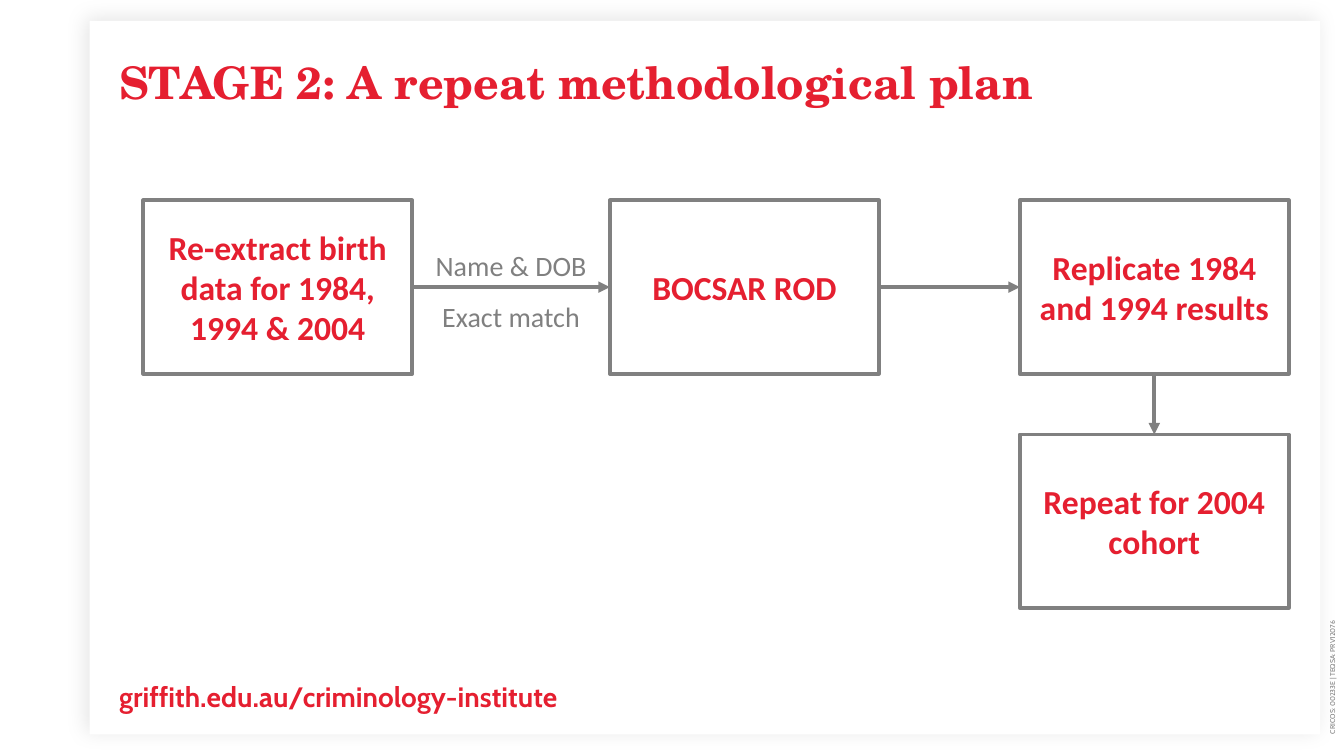
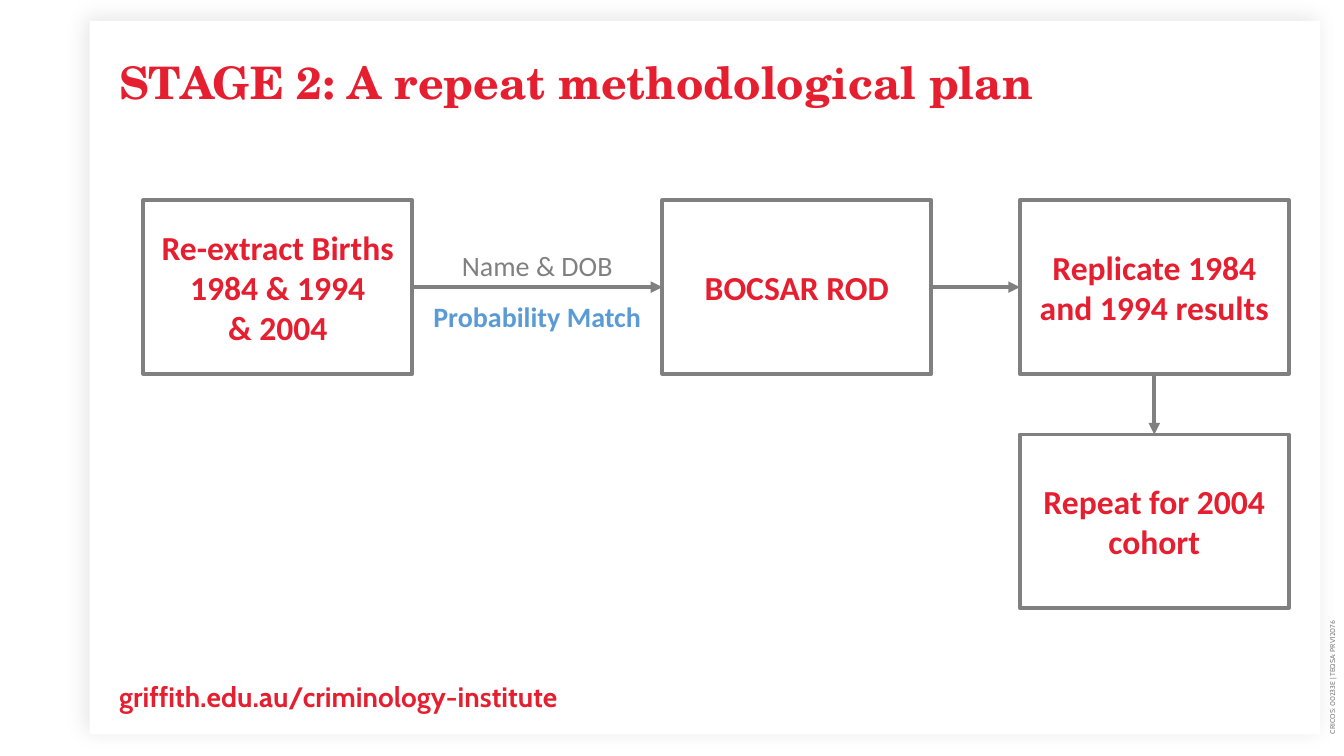
"""Build two slides that show the stage 2 plan as a flow of linked boxes."""
from dataclasses import dataclass

import lxml.etree
import pptx
import pptx.dml.color
import pptx.enum.shapes
import pptx.enum.text
import pptx.oxml
import pptx.oxml.ns
import pptx.util

Cm = pptx.util.Cm
Pt = pptx.util.Pt
RGB = pptx.dml.color.RGBColor
Align = pptx.enum.text.PP_ALIGN
Anchor = pptx.enum.text.MSO_ANCHOR
RECTANGLE = pptx.enum.shapes.MSO_SHAPE.RECTANGLE
qn = pptx.oxml.ns.qn


@dataclass(frozen=True)
class Style:
    """Font, size, colour and weight of a run."""
    font: str
    size: float
    color: RGB
    bold: bool = False


@dataclass(frozen=True)
class Theme:
    """Colours, line width and text styles shared by the slides."""
    white = RGB.from_string("FFFFFF")
    red = RGB.from_string("E51F30")
    grey = RGB.from_string("808080")
    blue = RGB.from_string("5B9BD5")
    line_width = Pt(2.75)
    title = Style("TeX Gyre Schola", 32, red, True)
    website = Style("Cabin", 20, red, True)
    provider = Style("Cabin", 5, grey)
    step = Style("Calibri", 24, red, True)
    label = Style("Calibri", 20, grey)
    accent = Style("Calibri", 20, blue, True)


THEME = Theme()

TITLE = "STAGE 2: A repeat methodological plan"
WEBSITE = "griffith.edu.au/criminology-institute"
PROVIDER = "CRICOS: 00233E | TEQSA: PRV12076"
DATABASE = ["BOCSAR ROD"]
REPLICATE = ["Replicate 1984 and 1994 results"]
REPEAT = ["Repeat for 2004 cohort"]
PLANS = [
    {
        "births": ["Re-extract birth data for 1984, 1994 & 2004"],
        "database_left": 15.37,
        "match": [("Name & DOB", THEME.label), ("Exact match", THEME.label)],
    },
    {
        "births": ["Re-extract Births", "1984 & 1994", "& 2004"],
        "database_left": 16.69,
        "match": [("Name & DOB", THEME.label), ("Probability Match", THEME.accent)],
    },
]

SLIDE_SIZE = (33.87, 19.05)
PANEL = (2.26, 0.53, 31.01, 17.98)
TITLE_AREA = (2.24, 1.5, 30.84, 1.75)
WEBSITE_AREA = (2.24, 16.54, 30.84, 1.98)
PROVIDER_AREA = (24.61, 9.25, 17.93, 0.56)
STEP_WIDTH, STEP_HEIGHT = 6.78, 4.37
BIRTHS_LEFT, RESULTS_LEFT = 3.61, 25.7
ROW_TOP, REPEAT_TOP = 5.05, 10.95
MATCH_TOP, MATCH_HEIGHT = 5.72, 2.69
TOP, LEFT, BOTTOM, RIGHT = range(4)


def lengths(values):
    """Turn numbers in centimetres into lengths."""
    return [Cm(value) for value in values]


def write(shape, lines, align=Align.LEFT, anchor=Anchor.TOP, insets=None, spacing=None):
    """Fill a shape with one paragraph for each (text, style) line."""
    frame = shape.text_frame
    frame.word_wrap = True
    frame.auto_size = pptx.enum.text.MSO_AUTO_SIZE.NONE
    frame.vertical_anchor = anchor
    if insets:
        (frame.margin_left, frame.margin_top,
         frame.margin_right, frame.margin_bottom) = lengths(insets)
    for index, (text, style) in enumerate(lines):
        paragraph = frame.add_paragraph() if index else frame.paragraphs[0]
        paragraph.alignment = align
        if spacing:
            paragraph.line_spacing = spacing
        run = paragraph.add_run()
        run.text = text
        run.font.name = style.font
        run.font.size = Pt(style.size)
        run.font.bold = style.bold
        run.font.color.rgb = style.color


def add_panel(slide):
    """Place the white panel with its soft shadow on the slide's layout."""
    panel = slide.shapes.add_shape(RECTANGLE, *lengths(PANEL))
    panel.fill.solid()
    panel.fill.fore_color.rgb = THEME.white
    panel.line.fill.background()
    panel.shadow.inherit = False
    effects = panel.element.spPr.find(qn("a:effectLst"))
    effects.append(pptx.oxml.parse_xml(
        f'<a:outerShdw {pptx.oxml.ns.nsdecls("a")} blurRad="{Pt(15)}" dist="{Pt(3)}" '
        'dir="13500000" algn="ctr" rotWithShape="0">'
        '<a:srgbClr val="000000"><a:alpha val="10000"/></a:srgbClr></a:outerShdw>'))
    panel.element.nvSpPr.cNvPr.set("id", "20")
    slide.slide_layout.placeholders[0].element.addprevious(panel.element)


def add_frame(slide):
    """Write the title, website and provider line."""
    title = slide.shapes.title
    title.left, title.top, title.width, title.height = lengths(TITLE_AREA)
    write(title, [(TITLE, THEME.title)], insets=(0.76, 0.13, 0.51, 0.13), spacing=0.8)
    website = slide.shapes.add_textbox(*lengths(WEBSITE_AREA))
    write(website, [(WEBSITE, THEME.website)], insets=(0.76, 0.51, 0.51, 0.51), spacing=1.1)
    provider = slide.shapes.add_textbox(*lengths(PROVIDER_AREA))
    provider.rotation = 270
    write(provider, [(PROVIDER, THEME.provider)], anchor=Anchor.MIDDLE, insets=(0, 0, 0, 0))


def add_step(slide, left, top, lines):
    """Add one outlined step of the flow."""
    step = slide.shapes.add_shape(
        RECTANGLE, *lengths((left, top, STEP_WIDTH, STEP_HEIGHT)))
    step.fill.background()
    step.line.color.rgb = THEME.grey
    step.line.width = THEME.line_width
    step.shadow.inherit = False
    write(step, [(line, THEME.step) for line in lines], Align.CENTER, Anchor.MIDDLE)
    return step


def add_arrow(slide, start, start_site, end, end_site):
    """Link two steps with an arrow."""
    arrow = slide.shapes.add_connector(
        pptx.enum.shapes.MSO_CONNECTOR.STRAIGHT, 0, 0, 0, 0)
    arrow.begin_connect(start, start_site)
    arrow.end_connect(end, end_site)
    arrow.line.color.rgb = THEME.grey
    arrow.line.width = THEME.line_width
    properties = arrow.element.spPr
    lxml.etree.SubElement(properties.find(qn("a:ln")), qn("a:tailEnd"), type="triangle")
    lxml.etree.SubElement(properties, qn("a:effectLst"))


def add_flow(slide, plan):
    """Draw the steps, arrows and match label of one plan."""
    births = add_step(slide, BIRTHS_LEFT, ROW_TOP, plan["births"])
    database = add_step(slide, plan["database_left"], ROW_TOP, DATABASE)
    replicate = add_step(slide, RESULTS_LEFT, ROW_TOP, REPLICATE)
    repeat = add_step(slide, RESULTS_LEFT, REPEAT_TOP, REPEAT)
    add_arrow(slide, births, RIGHT, database, LEFT)
    add_arrow(slide, database, RIGHT, replicate, LEFT)
    add_arrow(slide, replicate, BOTTOM, repeat, TOP)
    gap_left = BIRTHS_LEFT + STEP_WIDTH
    gap_width = plan["database_left"] - gap_left
    match = slide.shapes.add_textbox(
        *lengths((gap_left, MATCH_TOP, gap_width, MATCH_HEIGHT)))
    write(match, plan["match"], Align.CENTER, insets=(0, 0.13, 0, 0.13), spacing=1.5)


def main():
    """Build and save the presentation."""
    deck = pptx.Presentation()
    deck.slide_width, deck.slide_height = lengths(SLIDE_SIZE)
    title_only = deck.slide_layouts.get_by_name("Title Only")
    for index, plan in enumerate(PLANS):
        slide = deck.slides.add_slide(title_only)
        if index == 0:
            add_panel(slide)
        add_frame(slide)
        add_flow(slide, plan)
    deck.save("out.pptx")


if __name__ == "__main__":
    main()
